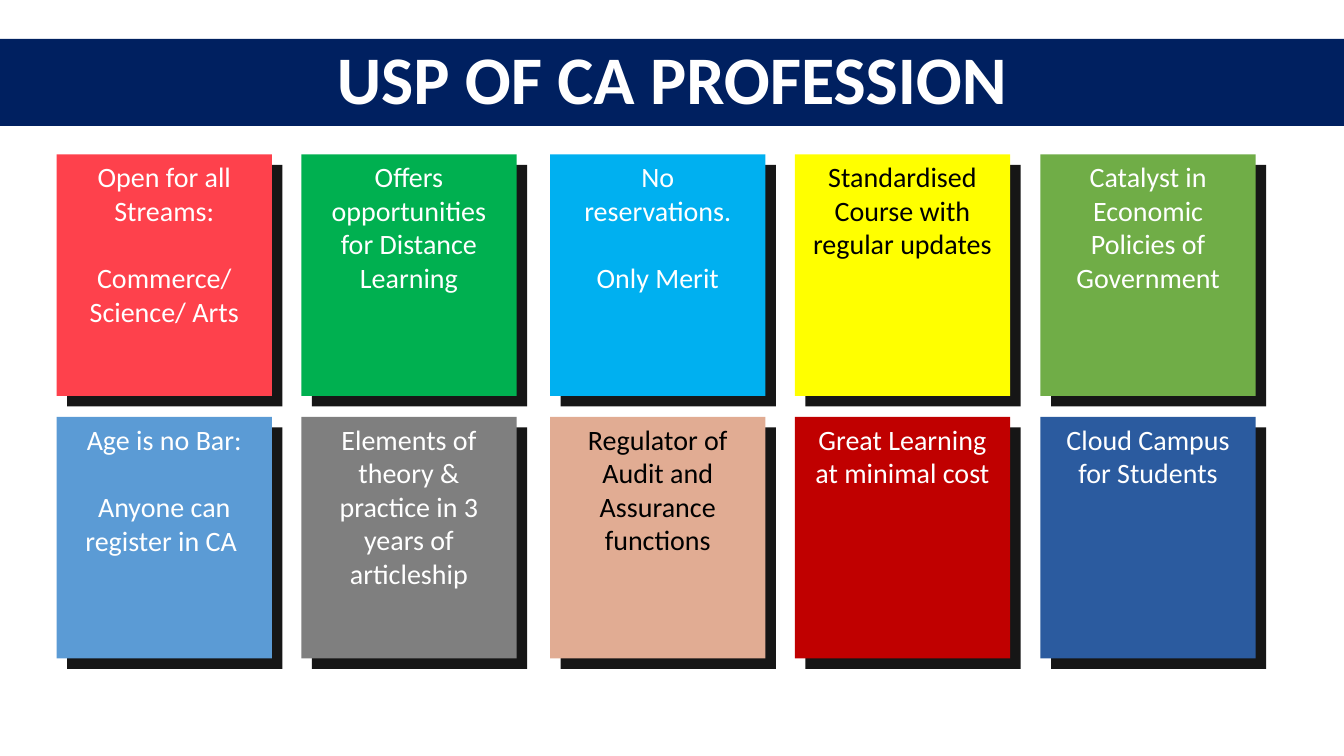
from pptx import Presentation
from pptx.dml.color import RGBColor
from pptx.enum.shapes import MSO_SHAPE as Preset
from pptx.enum.text import MSO_ANCHOR as Anchor, MSO_AUTO_SIZE as AutoSize, PP_ALIGN as Align
from pptx.util import Pt

EMU_PER_PX = 9525
SLIDE_WIDTH, SLIDE_HEIGHT = 1280, 720
CARD_WIDTH, CARD_HEIGHT = 205, 230
SHADOW_OFFSET = 10
COLUMN_LEFTS = [54, 287, 524, 757, 991]
ROW_TOPS = [147, 397]
NAVY, WHITE, BLACK, SHADOW = "002060", "FFFFFF", "000000", "161616"

CARD_ROWS = [
    [
        (["Open for all Streams:", "Commerce/ Science/ Arts"], "FE414C", WHITE),
        (["Offers opportunities for Distance Learning"], "00B050", WHITE),
        (["No reservations.", "Only Merit"], "00B0F0", WHITE),
        (["Standardised Course with regular updates"], "FFFF00", BLACK),
        (["Catalyst in Economic Policies of Government"], "70AD47", WHITE),
    ],
    [
        (["Age is no Bar:", "Anyone can register in CA "], "5B9BD5", WHITE),
        (["Elements of theory & practice in 3 years of articleship"], "7F7F7F", WHITE),
        (["Regulator of Audit and Assurance functions"], "E1AC93", BLACK),
        (["Great Learning at minimal cost"], "C00000", WHITE),
        (["Cloud Campus for Students"], "2B5B9F", WHITE),
    ],
]


def px(length):
    return length * EMU_PER_PX


def color(hex_code):
    return RGBColor.from_string(hex_code)


def fill_with(shape, hex_code):
    shape.fill.solid()
    shape.fill.fore_color.rgb = color(hex_code)
    shape.line.fill.background()


def write_text(shape, lines, *, size, ink, bold=False, anchor=Anchor.TOP,
               insets=(10, 5, 10, 5), spacing=1.0, gap=0):
    frame = shape.text_frame
    frame.word_wrap = True
    frame.auto_size = AutoSize.NONE
    frame.vertical_anchor = anchor
    (frame.margin_left, frame.margin_top,
     frame.margin_right, frame.margin_bottom) = map(px, insets)
    for index, line in enumerate(lines):
        paragraph = frame.add_paragraph() if index else frame.paragraphs[0]
        paragraph.alignment = Align.CENTER
        paragraph.line_spacing = spacing
        paragraph.space_before = Pt(gap if index else 0)
        run = paragraph.add_run()
        run.text = line
        run.font.name = "Calibri"
        run.font.size = Pt(size)
        run.font.bold = bold
        run.font.color.rgb = color(ink)


def format_title(title):
    title.left, title.top = 0, px(37)
    title.width, title.height = px(SLIDE_WIDTH), px(83)
    fill_with(title, NAVY)
    write_text(title, ["USP OF CA PROFESSION"], size=48.6, ink=WHITE, bold=True,
               anchor=Anchor.MIDDLE, spacing=0.9)


def add_panel(group, left, top, fill):
    panel = group.shapes.add_shape(
        Preset.RECTANGLE, px(left), px(top), px(CARD_WIDTH), px(CARD_HEIGHT))
    panel.shadow.inherit = False
    fill_with(panel, fill)
    return panel


def add_card(slide, left, top, lines, fill, ink):
    card = slide.shapes.add_group_shape()
    add_panel(card, left + SHADOW_OFFSET, top + SHADOW_OFFSET, SHADOW)
    face = add_panel(card, left, top, fill)
    write_text(face, lines, size=20, ink=ink, insets=(14, 5, 14, 19), gap=24.4)


def main():
    deck = Presentation()
    deck.slide_width, deck.slide_height = px(SLIDE_WIDTH), px(SLIDE_HEIGHT)
    slide = deck.slides.add_slide(deck.slide_layouts.get_by_name("Title Only"))
    format_title(slide.shapes.title)
    for top, cards in zip(ROW_TOPS, CARD_ROWS):
        for left, (lines, fill, ink) in zip(COLUMN_LEFTS, cards):
            add_card(slide, left, top, lines, fill, ink)
    deck.save("out.pptx")


if __name__ == "__main__":
    main()
